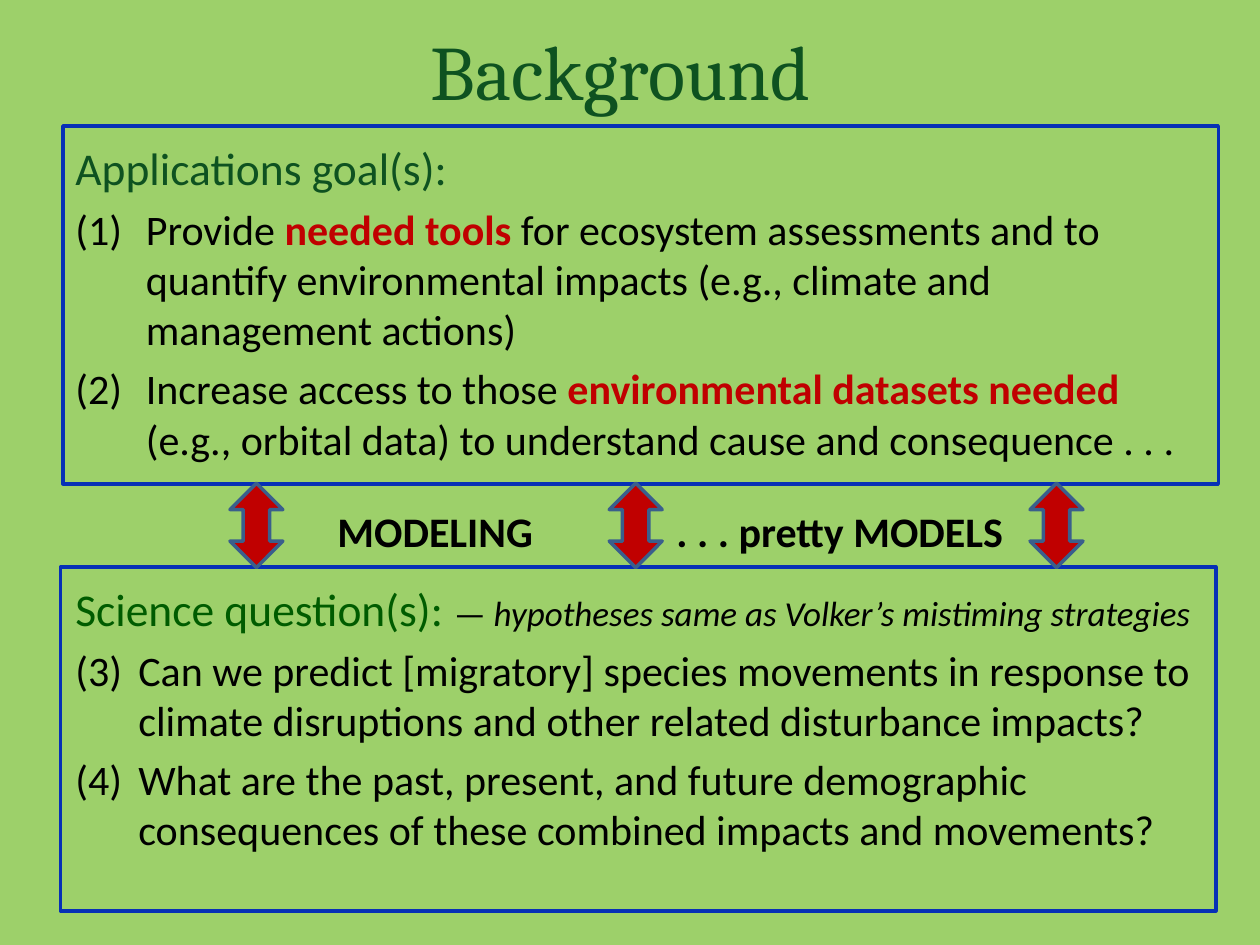
from pptx import Presentation
from pptx.util import Inches, Pt
from pptx.dml.color import RGBColor
from pptx.enum.shapes import MSO_SHAPE as Shape
from pptx.enum.text import PP_ALIGN as Align, MSO_ANCHOR as Anchor
from lxml.etree import SubElement as Sub
from pptx.oxml.ns import qn

HUES = {"back": "9DD06A", "title": "0E5220", "green": "005C00", "text": "000000",
        "red": "C00000", "frame": "0630B6", "edge": "3A5F8C"}


def add_text(box, runs, first, font="Calibri"):
    para = box.paragraphs[0] if first else box.add_paragraph()
    for words, size, hue, style in runs:
        run = para.add_run()
        run.text = words
        run.font.name = font
        run.font.size = Pt(size)
        run.font.color.rgb = RGBColor.from_string(HUES[hue])
        run.font.bold = style == "bold"
        run.font.italic = style == "italic"
    return para


def add_box(x, y, w, h):
    frame = slide.shapes.add_textbox(Inches(x), Inches(y), Inches(w), Inches(h)).text_frame
    frame.word_wrap = True
    return frame


deck = Presentation()
deck.slide_width, deck.slide_height = Inches(10), Inches(7.5)
slide = deck.slides.add_slide(deck.slide_layouts[6])
slide.background.fill.solid()
slide.background.fill.fore_color.rgb = RGBColor.from_string(HUES["back"])

title = add_box(0.44, 0.26, 8.97, 0.58)
title.vertical_anchor = Anchor.MIDDLE
add_text(title, [("Background", 44, "title", "")], True, "Cambria").alignment = Align.CENTER

goals = [
    [("Applications goal(s):", 26, "title", "")],
    [("Provide ", 24, "text", ""), ("needed tools", 24, "red", "bold"),
     (" for ecosystem assessments and to quantify environmental impacts "
      "(e.g., climate and management actions)", 24, "text", "")],
    [("Increase access to those ", 24, "text", ""),
     ("environmental datasets needed ", 24, "red", "bold"),
     ("(e.g., orbital data) to understand cause and consequence . . .", 24, "text", "")],
]
asks = [
    [("Science question(s): ", 26, "green", ""), ("— ", 20, "text", ""),
     ("hypotheses same as Volker’s mistiming strategies", 20, "text", "italic")],
    [("Can we predict [migratory] species movements in response to climate "
      "disruptions and other related disturbance impacts?", 24, "text", "")],
    [("What are the past, present, and future demographic consequences of "
      "these combined impacts and movements?", 24, "text", "")],
]

for top, high, indent, start, lines in [(1.06, 2.7, 0.56, 1, goals), (4.56, 2.6, 0.5, 3, asks)]:
    body = add_box(0.5, top, 9.17, high)
    for i, runs in enumerate(lines):
        para = add_text(body, runs, i == 0)
        para.space_before = Pt(5)
        if i:
            props = para._p.get_or_add_pPr()
            props.set("marL", str(Inches(indent)))
            props.set("indent", str(-Inches(indent)))
            Sub(props, qn("a:buFont"), typeface="Calibri")
            Sub(props, qn("a:buAutoNum"), type="arabicParenBoth", startAt=str(start))

frames = [(Shape.RECTANGLE, 0.5, 1, 9.17, 2.84), (Shape.RECTANGLE, 0.48, 4.5, 9.17, 2.73)]
arrows = [(Shape.LEFT_RIGHT_ARROW, x, 3.96, 0.67, 0.42) for x in (1.7, 4.71, 8.05)]
for kind, x, y, w, h in frames + arrows:
    item = slide.shapes.add_shape(kind, Inches(x), Inches(y), Inches(w), Inches(h))
    item.shadow.inherit = False
    item.line.width = Pt(2)
    if kind == Shape.RECTANGLE:
        item.fill.background()
        edge = "frame"
    else:
        item.rotation = 90
        item.fill.solid()
        item.fill.fore_color.rgb = RGBColor.from_string(HUES["red"])
        edge = "edge"
    item.line.color.rgb = RGBColor.from_string(HUES[edge])

for words, x, w in [("MODELING", 2.58, 1.8), (". . . pretty MODELS", 5.27, 2.83)]:
    add_text(add_box(x, 3.96, w, 0.5), [(words, 24, "text", "bold")], True)

deck.save("out.pptx")
